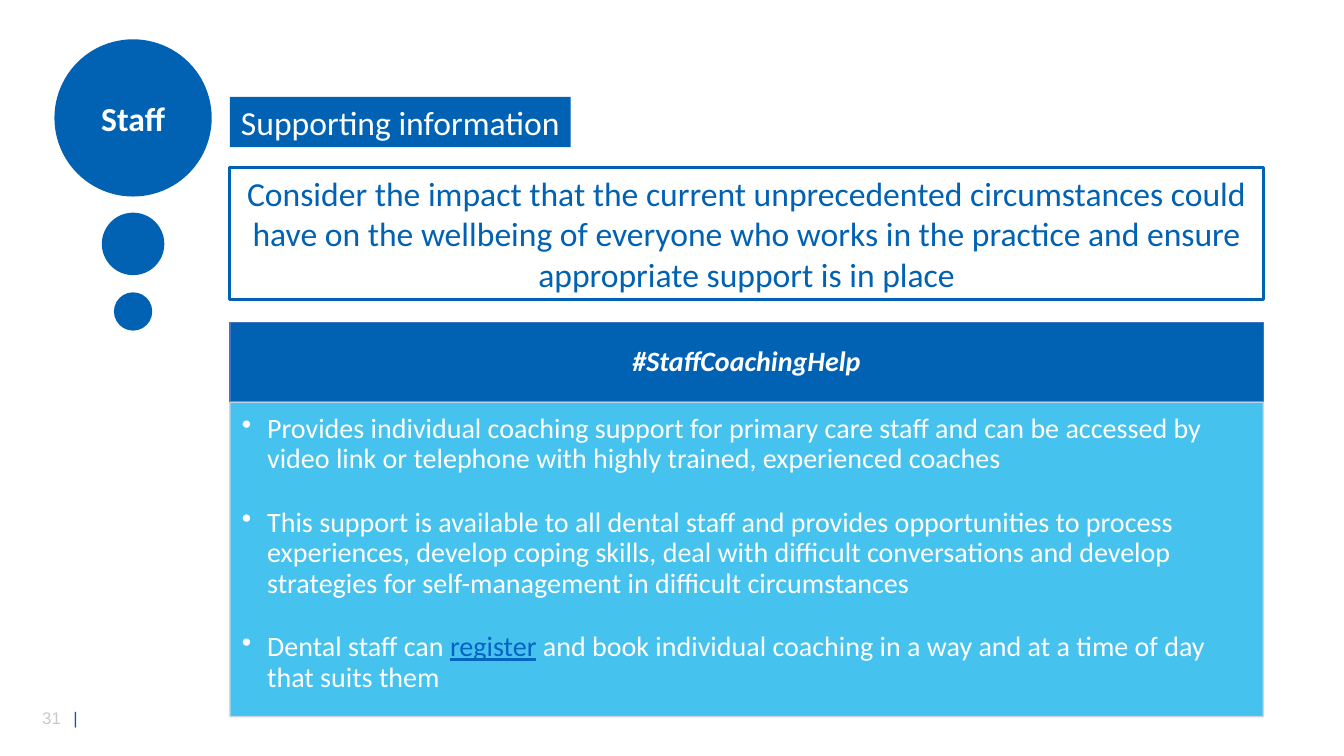
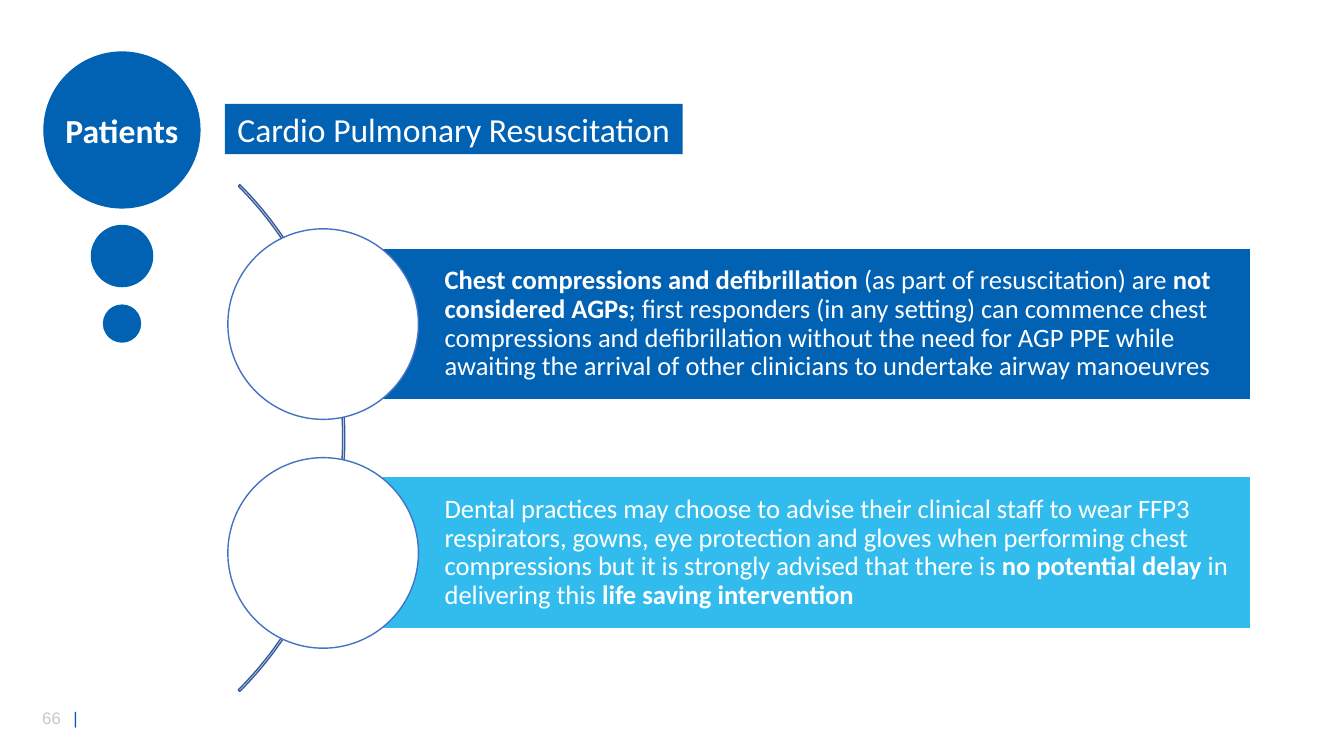
from dataclasses import dataclass

from lxml import etree
from pptx import Presentation
from pptx.dml.color import RGBColor
from pptx.enum.shapes import MSO_SHAPE
from pptx.enum.text import MSO_ANCHOR, MSO_AUTO_SIZE, PP_ALIGN
from pptx.oxml.ns import qn
from pptx.util import Emu, Pt

RECT, OVAL, ARC = MSO_SHAPE.RECTANGLE, MSO_SHAPE.OVAL, MSO_SHAPE.BLOCK_ARC
LEFT, CENTER = PP_ALIGN.LEFT, PP_ALIGN.CENTER
TOP, MIDDLE = MSO_ANCHOR.TOP, MSO_ANCHOR.MIDDLE
NO_FIT = MSO_AUTO_SIZE.NONE
EMU_PER_PX = 9144
TITLE_ONLY = 5
BLUE, SKY, WHITE = "0161B3", "32BCEE", "FFFFFF"
OUTLINE, ARC_LINE, PALE_LINE = "4472C4", "365B9D", "CFD5EA"
LINK, GREY, FOOTER_BAR = "0563C1", "C9C9C9", "005EB8"
INSETS = (10, 5, 10, 5)
BUBBLES = ((156, 0), (62, 172), (38, 251))


@dataclass(frozen=True)
class Run:
    """A piece of text with its own emphasis."""
    text: str
    bold: bool = False
    italic: bool = False
    underline: bool = False
    color: str = WHITE


@dataclass(frozen=True)
class TextStyle:
    """Formatting shared by every paragraph in a box."""
    size: int = 24
    font: str = "Calibri"
    align: PP_ALIGN = CENTER
    anchor: MSO_ANCHOR = MIDDLE
    spacing: float = 1.0
    gap: int = 0
    bullet: bool = False
    tab: int = 0
    wrap: bool = True
    insets: tuple[int, int, int, int] = INSETS


@dataclass(frozen=True)
class Box:
    """Position and size in px."""
    x: int
    y: int
    w: int
    h: int


@dataclass(frozen=True)
class Header:
    """The parts of a slide that repeat throughout the deck."""
    number: str
    topic: str
    title: str
    title_box: Box
    bubble_center: int
    bubble_top: int


TITLE = TextStyle(wrap=False, anchor=TOP)
TOPIC = TextStyle(wrap=False)
FOOTER = TextStyle(12, "Arial", LEFT, TOP, tab=31, wrap=False)
STATEMENT = TextStyle()
CARD_HEAD = TextStyle(20, spacing=0.9, insets=(16, 9, 16, 9))
CARD_BODY = TextStyle(20, align=LEFT, anchor=TOP, spacing=0.9, gap=24,
                      bullet=True, insets=(12, 12, 16, 17))
BAND = TextStyle(19, align=LEFT, spacing=0.9, insets=(120, 5, 5, 5))

STAFF = Header("31", "Staff", "Supporting information",
               Box(228, 96, 338, 50), 132, 39)
PATIENTS = Header("66", "Patients", "Cardio Pulmonary Resuscitation",
                  Box(223, 103, 454, 50), 121, 51)

SUPPORT = [
    [Run("Provides individual coaching support for primary care staff and can be "
         "accessed by video link or telephone with highly trained, experienced coaches")],
    [Run("This support is available to all dental staff and provides opportunities to "
         "process experiences, develop coping skills, deal with difficult conversations "
         "and develop strategies for self-management in difficult circumstances")],
    [Run("Dental staff can "), Run("register", underline=True, color=LINK),
     Run(" and book individual coaching in a way and at a time of day that suits them")],
]
BANDS = [
    (BLUE, [
        Run("Chest compressions and defibrillation ", bold=True),
        Run("(as part of resuscitation) are "),
        Run("not considered AGPs", bold=True),
        Run("; first responders (in any setting) can commence chest compressions and "
            "defibrillation without the need for AGP PPE while awaiting the arrival of "
            "other clinicians to undertake airway manoeuvres")]),
    (SKY, [
        Run("Dental practices may choose to advise their clinical staff to wear FFP3 "
            "respirators, gowns, eye protection and gloves when performing chest "
            "compressions but it is strongly advised that there is "),
        Run("no potential delay ", bold=True),
        Run("in delivering this "),
        Run("life saving intervention", bold=True)]),
]


def px(n: int) -> Emu:
    """Turn px into EMU."""
    return Emu(n * EMU_PER_PX)


def rgb(color: str) -> RGBColor:
    """Turn a hex string into a colour."""
    return RGBColor.from_string(color)


def set_all(obj, values: dict) -> None:
    """Set every named attribute on an object."""
    for name, value in values.items():
        setattr(obj, name, value)


def place(sp, box: Box) -> None:
    """Move and size a shape."""
    set_all(sp, {"left": px(box.x), "top": px(box.y),
                 "width": px(box.w), "height": px(box.h)})


def paint(sp, fill: str | None, line: str | None = None, width: float = 1) -> None:
    """Give a shape its fill and outline."""
    if fill:
        sp.fill.solid()
        sp.fill.fore_color.rgb = rgb(fill)
    else:
        sp.fill.background()
    if line:
        sp.line.color.rgb = rgb(line)
        sp.line.width = Pt(width)
    else:
        sp.line.fill.background()


def add_shape(s, kind: MSO_SHAPE, box: Box, fill: str | None,
              line: str | None = None, width: float = 1):
    """Draw a flat preset shape."""
    sp = s.shapes.add_shape(kind, px(box.x), px(box.y), px(box.w), px(box.h))
    sp.shadow.inherit = False
    paint(sp, fill, line, width)
    return sp


def set_opacity(sp, percent: int) -> None:
    """Make the fill and outline of a shape partly transparent."""
    for clr in sp._element.spPr.iter(qn("a:srgbClr")):
        etree.SubElement(clr, qn("a:alpha"), val=str(percent * 1000))


def write(sp, paragraphs: list[list[Run]], style: TextStyle) -> None:
    """Fill a shape with formatted paragraphs."""
    tf = sp.text_frame
    left, top, right, bottom = map(px, style.insets)
    set_all(tf, {"auto_size": NO_FIT, "word_wrap": style.wrap,
                 "vertical_anchor": style.anchor, "margin_left": left,
                 "margin_top": top, "margin_right": right, "margin_bottom": bottom})
    for i, runs in enumerate(paragraphs):
        p = tf.add_paragraph() if i else tf.paragraphs[0]
        pPr = p._p.get_or_add_pPr()
        if style.bullet:
            pPr.set("marL", str(px(25)))
            pPr.set("indent", str(px(-25)))
            etree.SubElement(pPr, qn("a:buChar"), char="•")
        if style.tab:
            tabs = etree.SubElement(pPr, qn("a:tabLst"))
            etree.SubElement(tabs, qn("a:tab"), pos=str(px(style.tab)), algn="l")
        set_all(p, {"alignment": style.align, "line_spacing": style.spacing,
                    "space_before": Pt(style.gap if i else 0)})
        for run in runs:
            r = p.add_run()
            r.text = run.text
            set_all(r.font, {"name": style.font, "size": Pt(style.size), "bold": run.bold,
                             "italic": run.italic, "underline": run.underline})
            r.font.color.rgb = rgb(run.color)


def add_slide(prs, header: Header):
    """Add a slide with its title, topic bubbles and page number."""
    s = prs.slides.add_slide(prs.slide_layouts[TITLE_ONLY])
    title = s.shapes.title
    place(title, header.title_box)
    paint(title, BLUE)
    write(title, [[Run(header.title)]], TITLE)
    for size, offset in BUBBLES:
        box = Box(header.bubble_center - size // 2, header.bubble_top + offset, size, size)
        sp = add_shape(s, OVAL, box, BLUE)
        if not offset:
            write(sp, [[Run(header.topic, bold=True)]], TOPIC)
    footer = s.shapes.add_textbox(px(32), px(697), px(71), px(30))
    write(footer, [[Run(header.number + "\t", color=GREY),
                    Run("|", color=FOOTER_BAR)]], FOOTER)
    return s


def add_staff_slide(prs) -> None:
    """Build the staff support slide."""
    s = add_slide(prs, STAFF)
    statement = add_shape(s, RECT, Box(228, 166, 1025, 131), None, BLUE, 2.25)
    write(statement, [[Run(
        "Consider the impact that the current unprecedented circumstances could have on "
        "the wellbeing of everyone who works in the practice and ensure appropriate "
        "support is in place", color=BLUE)]], STATEMENT)
    head = add_shape(s, RECT, Box(228, 320, 1025, 79), BLUE, OUTLINE)
    write(head, [[Run("#StaffCoachingHelp", bold=True, italic=True)]], CARD_HEAD)
    body = add_shape(s, RECT, Box(228, 399, 1025, 312), SKY, PALE_LINE)
    set_opacity(body, 90)
    write(body, SUPPORT, CARD_BODY)


def add_patients_slide(prs) -> None:
    """Build the resuscitation slide."""
    s = add_slide(prs, PATIENTS)
    arc = add_shape(s, ARC, Box(-369, 79, 711, 711), None, ARC_LINE)
    for i, value in enumerate((189, 27, 0.003)):
        arc.adjustments[i] = value
    for i, (color, runs) in enumerate(BANDS):
        top = 227 + i * 227
        band = add_shape(s, RECT, Box(321, top + 19, 920, 151), color, WHITE)
        write(band, [runs], BAND)
        add_shape(s, OVAL, Box(226, top, 189, 189), WHITE, OUTLINE)


def main() -> None:
    """Build and save the deck."""
    prs = Presentation()
    set_all(prs, {"slide_width": px(1333), "slide_height": px(750)})
    add_staff_slide(prs)
    add_patients_slide(prs)
    prs.save("out.pptx")


if __name__ == "__main__":
    main()
